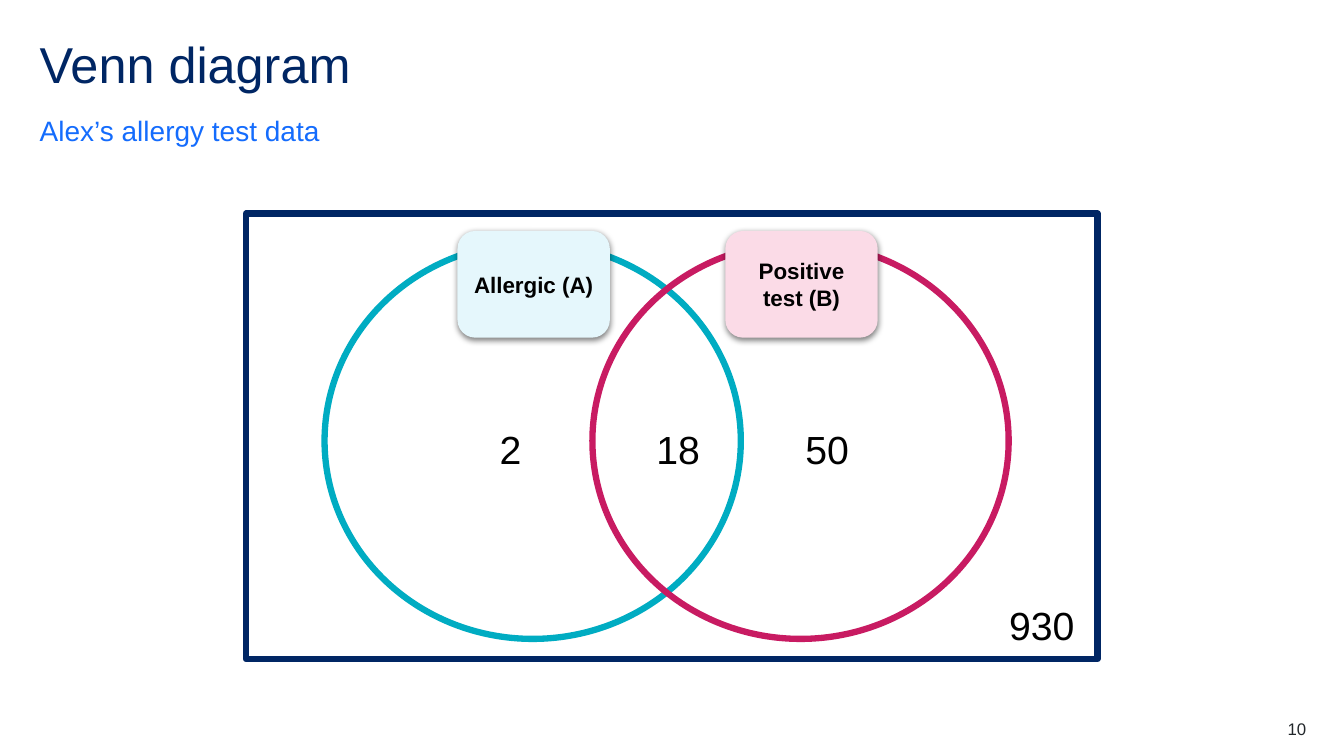
import pptx
import pptx.util
import pptx.dml.color
import pptx.enum.shapes
import pptx.enum.text
import lxml.etree

Cm = pptx.util.Cm
Pt = pptx.util.Pt
RGBColor = pptx.dml.color.RGBColor
SHAPE = pptx.enum.shapes.MSO_SHAPE
ANCHOR = pptx.enum.text.MSO_ANCHOR
ALIGN = pptx.enum.text.PP_ALIGN

NAVY = RGBColor(0x00, 0x26, 0x64)
BLUE = RGBColor(0x14, 0x6C, 0xFD)
TEAL = RGBColor(0x00, 0xAC, 0xC2)
PALE_TEAL = RGBColor(0xE5, 0xF7, 0xFC)
CRIMSON = RGBColor(0xC8, 0x1B, 0x62)
PALE_PINK = RGBColor(0xFB, 0xDB, 0xE7)
BLACK = RGBColor(0x00, 0x00, 0x00)
CHARCOAL = RGBColor(0x22, 0x27, 0x2B)

LABEL_SHADOW = (
    '<a:effectLst xmlns:a="http://schemas.openxmlformats.org/drawingml/2006/main">'
    '<a:outerShdw blurRad="57150" dist="19050" dir="5400000" algn="ctr" rotWithShape="0">'
    '<a:srgbClr val="000000"><a:alpha val="50000"/></a:srgbClr>'
    '</a:outerShdw></a:effectLst>'
)


class VennSlide:
    font_name = "Arial"
    outline_width = Pt(4.5)

    def __init__(self, presentation):
        self.slide = presentation.slides.add_slide(presentation.slide_layouts[6])

    def set_text(self, shape, text, size, color, inset=(0, 0), bold=False,
                 align=ALIGN.LEFT, anchor=ANCHOR.TOP):
        frame = shape.text_frame
        frame.word_wrap = True
        frame.vertical_anchor = anchor
        frame.margin_left = frame.margin_right = Cm(inset[0])
        frame.margin_top = frame.margin_bottom = Cm(inset[1])
        paragraph = frame.paragraphs[0]
        paragraph.text = text
        paragraph.alignment = align
        paragraph.font.name = self.font_name
        paragraph.font.size = Pt(size)
        paragraph.font.bold = bold
        paragraph.font.color.rgb = color
        return paragraph

    def text(self, box, text, size, color, **style):
        shape = self.slide.shapes.add_textbox(*map(Cm, box))
        return self.set_text(shape, text, size, color, **style)

    def outline(self, kind, box, color):
        shape = self.slide.shapes.add_shape(kind, *map(Cm, box))
        shape.shadow.inherit = False
        shape.fill.background()
        shape.line.color.rgb = color
        shape.line.width = self.outline_width

    def label(self, box, text, fill):
        shape = self.slide.shapes.add_shape(SHAPE.ROUNDED_RECTANGLE, *map(Cm, box))
        shape.fill.solid()
        shape.fill.fore_color.rgb = fill
        shape.line.fill.background()
        shape._element.spPr.append(lxml.etree.fromstring(LABEL_SHADOW))
        self.set_text(shape, text, 16, BLACK, inset=(0.23, 0.1), bold=True,
                      align=ALIGN.CENTER, anchor=ANCHOR.MIDDLE)

    def count(self, left, top, value):
        self.text((left, top, 2.5, 1.6), value, 28, BLACK, inset=(0.33, 0.33))


def main():
    presentation = pptx.Presentation()
    presentation.slide_width = Cm(33.87)
    presentation.slide_height = Cm(19.05)
    venn = VennSlide(presentation)

    # Headings
    title = venn.text((1, 1, 31.9, 1.52), "Venn diagram", 36, NAVY)
    title.line_spacing = 0.9
    subtitle = venn.text((1, 2.72, 31.9, 1), "Alex’s allergy test data", 20, BLUE,
                         anchor=ANCHOR.BOTTOM)
    subtitle.line_spacing = 1.5
    subtitle.space_after = Pt(12)

    # Counts inside the circles
    for left, value in ((12.26, "2"), (16.21, "18"), (19.97, "50")):
        venn.count(left, 10.39, value)

    # Overlapping sets, each with its label
    sets = (("Allergic (A)", TEAL, PALE_TEAL),
            ("Positive test (B)", CRIMSON, PALE_PINK))
    for index, (name, color, pale) in enumerate(sets):
        left = 8.18 + 6.75 * index
        venn.outline(SHAPE.OVAL, (left, 6.12, 10.49, 9.98), color)
        venn.label((left + 3.35, 5.82, 3.84, 2.69), name, pale)

    # Everyone tested, with the count outside both sets
    venn.outline(SHAPE.RECTANGLE, (6.2, 5.38, 21.46, 11.23), NAVY)
    venn.count(25.1, 14.83, "930")

    # Page number
    venn.text((30.91, 18.11, 2.01, 0.51), "10", 12, CHARCOAL, align=ALIGN.RIGHT)

    presentation.save("out.pptx")


if __name__ == "__main__":
    main()
